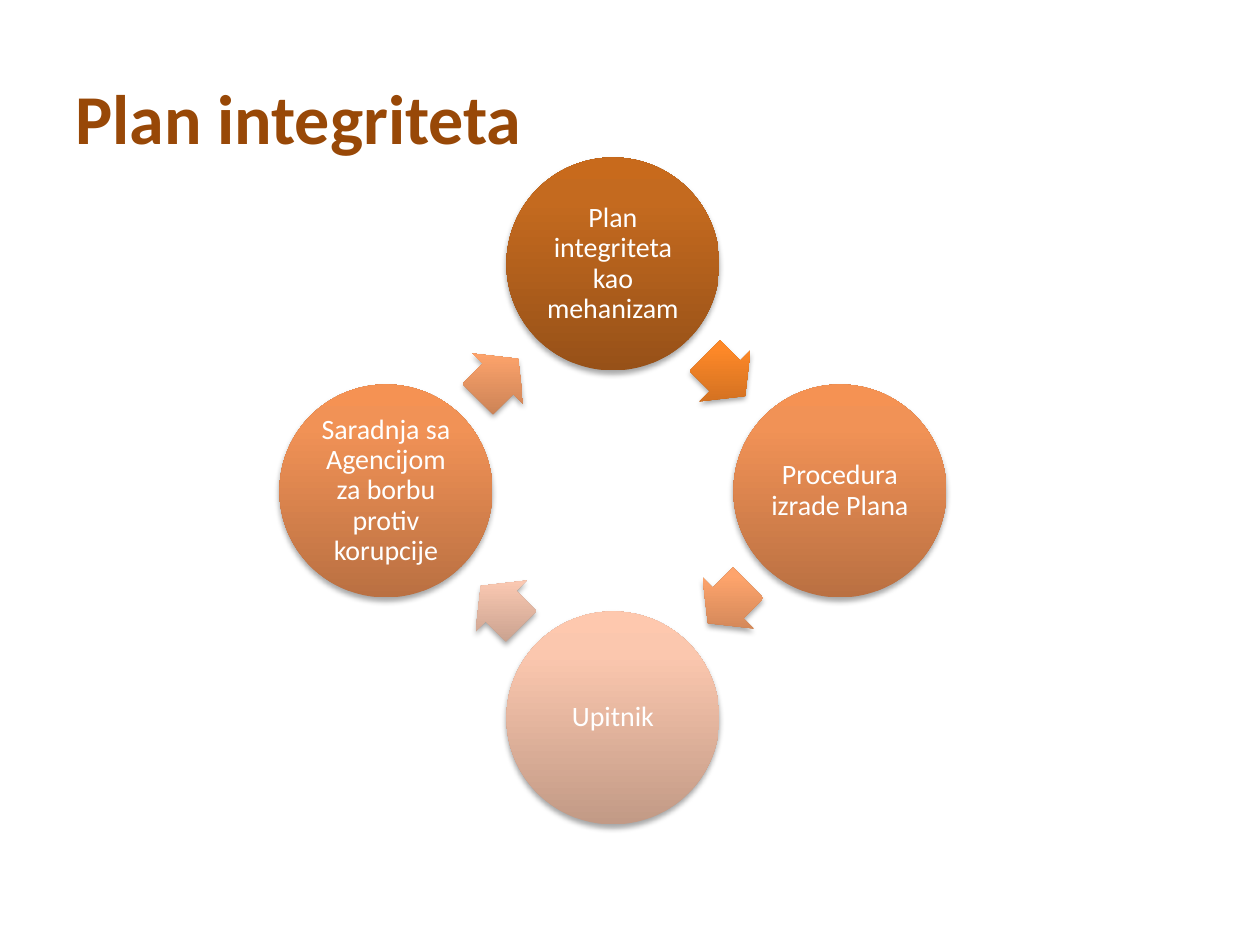
import pptx
import pptx.dml.color
import pptx.enum.shapes
import pptx.enum.text
import pptx.oxml
import pptx.oxml.ns
import pptx.util
from dataclasses import dataclass

RGB = pptx.dml.color.RGBColor
KIND = pptx.enum.shapes.MSO_SHAPE
ALIGN = pptx.enum.text.PP_ALIGN
MID = pptx.enum.text.MSO_ANCHOR.MIDDLE

SCALE = 914400 / 126
FONT = "Calibri"
BROWN = RGB(0x98, 0x48, 0x07)
WHITE = RGB(0xFF, 0xFF, 0xFF)

RUST = (RGB(0x97, 0x51, 0x18), RGB(0xC4, 0x6A, 0x1F), RGB(0xC8, 0x6A, 0x1C))
CORAL = (RGB(0xBA, 0x70, 0x42), RGB(0xF1, 0x92, 0x56), RGB(0xF5, 0x92, 0x53))
BLUSH = (RGB(0xC2, 0x9A, 0x86), RGB(0xFB, 0xC7, 0xAE), RGB(0xFE, 0xC8, 0xAE))
FLAME = (RGB(0xC3, 0x69, 0x1F), RGB(0xFD, 0x88, 0x28), RGB(0xFF, 0x89, 0x28))
PEACH = (RGB(0xC4, 0x7E, 0x53), RGB(0xFE, 0xA4, 0x6C), RGB(0xFF, 0xA5, 0x6D))
SHELL = (RGB(0xC2, 0x9C, 0x8A), RGB(0xFC, 0xCA, 0xB3), RGB(0xFE, 0xCA, 0xB2))

MID_X, MID_Y = 613, 491
RING = 227
DISC = 213
ARROW_W, ARROW_H = 57, 72


@dataclass
class Step:
    text: str
    disc: tuple[RGB, ...]
    arrow: tuple[RGB, ...]


STEPS = [
    Step("Plan integriteta kao mehanizam", RUST, FLAME),
    Step("Procedura izrade Plana", CORAL, PEACH),
    Step("Upitnik", BLUSH, SHELL),
    Step("Saradnja sa Agencijom za borbu protiv korupcije", CORAL, PEACH),
]


def px(size: float) -> int:
    return round(size * SCALE)


def turn(x: int, y: int, count: int) -> tuple[int, int]:
    for _ in range(count):
        x, y = -y, x
    return MID_X + x, MID_Y + y


def shade(shape, tones: tuple[RGB, ...]) -> None:
    shape.line.fill.background()
    names = pptx.oxml.ns.nsdecls("a")
    stops = "".join(
        f'<a:gs pos="{spot * 1000}"><a:srgbClr val="{tone}"/></a:gs>'
        for spot, tone in zip((0, 80, 100), tones)
    )
    grad = pptx.oxml.parse_xml(
        f'<a:gradFill {names} rotWithShape="0"><a:gsLst>{stops}</a:gsLst>'
        '<a:lin ang="16200000" scaled="0"/></a:gradFill>'
    )
    glow = pptx.oxml.parse_xml(
        f'<a:effectLst {names}><a:outerShdw blurRad="40000" dist="23000" '
        'dir="5400000" rotWithShape="0"><a:srgbClr val="000000">'
        '<a:alpha val="35000"/></a:srgbClr></a:outerShdw></a:effectLst>'
    )
    props = shape._element.spPr
    props.find(pptx.oxml.ns.qn("a:prstGeom")).addnext(grad)
    props.append(glow)


def add_part(slide, kind: KIND, spot: tuple[int, int], wide: int, high: int,
             tones: tuple[RGB, ...]):
    x, y = spot
    shape = slide.shapes.add_shape(
        kind, px(x - wide / 2), px(y - high / 2), px(wide), px(high))
    shade(shape, tones)
    return shape


def write(frame, text: str, size: int, tone: RGB, bold: bool = False):
    frame.word_wrap = True
    frame.vertical_anchor = MID
    para = frame.paragraphs[0]
    para.text = text
    para.font.name = FONT
    para.font.size = pptx.util.Pt(size)
    para.font.bold = bold
    para.font.color.rgb = tone
    return para


def add_step(slide, index: int, step: Step) -> None:
    disc = add_part(slide, KIND.OVAL, turn(0, -RING, index), DISC, DISC, step.disc)
    frame = disc.text_frame
    frame.margin_left = frame.margin_right = px(3)
    frame.margin_top = frame.margin_bottom = px(3)
    para = write(frame, step.text, 16, WHITE)
    para.alignment = ALIGN.CENTER
    para.line_spacing = 0.9

    arrow = add_part(slide, KIND.RIGHT_ARROW, turn(112, -115, index),
                     ARROW_W, ARROW_H, step.arrow)
    arrow.adjustments[0] = 0.6
    arrow.adjustments[1] = 0.5
    arrow.rotation = 45 + 90 * index


def main() -> None:
    deck = pptx.Presentation()
    deck.slide_width, deck.slide_height = px(1260), px(945)
    slide = deck.slides.add_slide(deck.slide_layouts[6])
    title = slide.shapes.add_textbox(px(63), px(38), px(1134), px(158))
    write(title.text_frame, "Plan integriteta", 40, BROWN, bold=True)
    for index, step in enumerate(STEPS):
        add_step(slide, index, step)
    deck.save("out.pptx")


if __name__ == "__main__":
    main()
